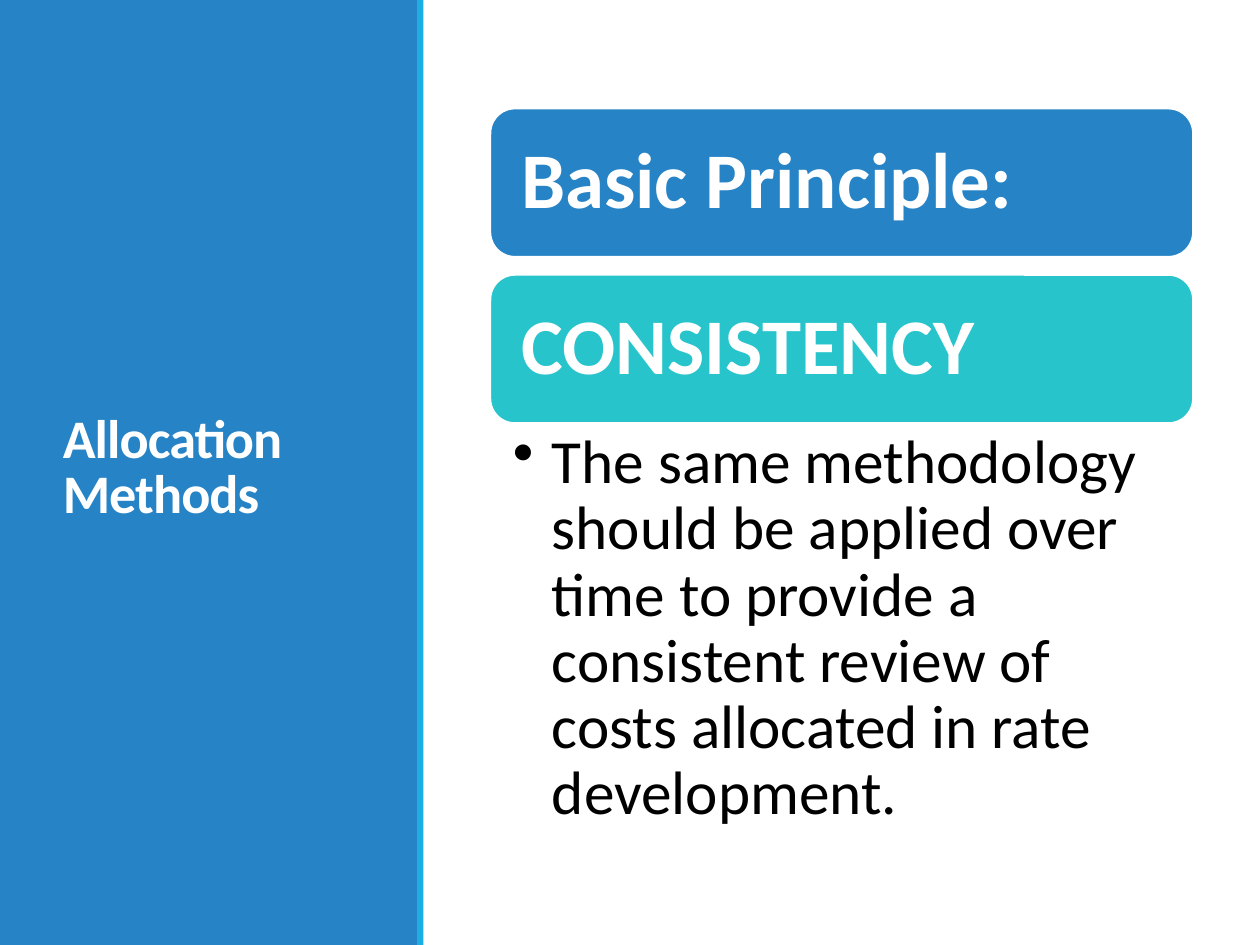
import pptx
import pptx.util
import pptx.dml.color
import pptx.enum.shapes
import pptx.enum.text
import pptx.oxml.ns
import lxml.etree

Inches = pptx.util.Inches
Pt = pptx.util.Pt
Shape = pptx.enum.shapes.MSO_SHAPE
Anchor = pptx.enum.text.MSO_ANCHOR

COLORS = {
    "blue": "2683C6",
    "accent": "1CADE4",
    "teal": "28C4CC",
    "white": "FFFFFF",
    "black": "000000",
}
FONT = "Calibri"


def color(name):
    """Return the named palette colour."""
    return pptx.dml.color.RGBColor.from_string(COLORS[name])


def add_block(page, kind, box, fill, line=None):
    """Add a filled shape in a box of inches, outlined if a line colour is given."""
    block = page.shapes.add_shape(kind, *map(Inches, box))
    block.shadow.inherit = False
    block.fill.solid()
    block.fill.fore_color.rgb = color(fill)
    if line:
        block.line.color.rgb = color(line)
        block.line.width = Pt(1.25)
    else:
        block.line.fill.background()
    return block


def write_text(shape, text, size, ink, bold, spacing, anchor, insets):
    """Write one left-aligned paragraph and return it with its run."""
    frame = shape.text_frame
    frame.word_wrap = True
    frame.vertical_anchor = anchor
    frame.margin_left, frame.margin_top, frame.margin_right, frame.margin_bottom = map(Inches, insets)
    para = frame.paragraphs[0]
    para.alignment = pptx.enum.text.PP_ALIGN.LEFT
    para.line_spacing = spacing
    span = para.add_run()
    span.text = text
    span.font.name = FONT
    span.font.size = Pt(size)
    span.font.bold = bold
    span.font.color.rgb = color(ink)
    return para, span


def add_bullet(para, indent):
    """Give a paragraph a hanging round bullet."""
    properties = para._p.get_or_add_pPr()
    properties.set("marL", str(Inches(indent)))
    properties.set("indent", str(-Inches(indent)))
    bullet = lxml.etree.SubElement(properties, pptx.oxml.ns.qn("a:buChar"))
    bullet.set("char", "•")


def add_title_panel(page, left, top, width, height):
    """Build the blue side panel with its title and accent stripe."""
    add_block(page, Shape.RECTANGLE, (left, top, width, height), "blue")
    title = page.shapes.add_textbox(Inches(left + 0.4), Inches(top + 0.57), Inches(2.53), Inches(6.31))
    para, span = write_text(title, "Allocation Methods", 31, "white", True, 0.85,
                            Anchor.MIDDLE, (0.1, 0.05, 0.1, 0.05))
    span._r.get_or_add_rPr().set("spc", "-50")
    add_block(page, Shape.RECTANGLE, (left + width - 0.01, top, 0.05, height), "accent")


def add_principle(page, left, top, width, height):
    """Stack the two heading bars above the bulleted explanation."""
    bar_height, pitch = 1.18, 1.32
    bars = [("Basic Principle:", "blue"), ("CONSISTENCY", "teal")]
    for index, (text, fill) in enumerate(bars):
        box = (left, top + index * pitch, width, bar_height)
        bar = add_block(page, Shape.ROUNDED_RECTANGLE, box, fill, "white")
        write_text(bar, text, 45, "white", True, 0.9, Anchor.MIDDLE, (0.19,) * 4)
    offset = pitch + bar_height
    body = page.shapes.add_textbox(Inches(left), Inches(top + offset), Inches(width), Inches(height - offset))
    para, span = write_text(
        body,
        "The same methodology should be applied over time to provide a "
        "consistent review of costs allocated in rate development.",
        35, "black", False, 0.9, Anchor.TOP, (0.18, 0.06, 0.35, 0.06))
    add_bullet(para, 0.31)


def main():
    """Create the slide and save the deck."""
    deck = pptx.Presentation()
    deck.slide_width, deck.slide_height = Inches(10), Inches(7.5)
    page = deck.slides.add_slide(deck.slide_layouts[6])
    add_title_panel(page, 0, 0, 3.32, 7.5)
    add_principle(page, 3.89, 0.86, 5.58, 5.86)
    deck.save("out.pptx")


if __name__ == "__main__":
    main()
